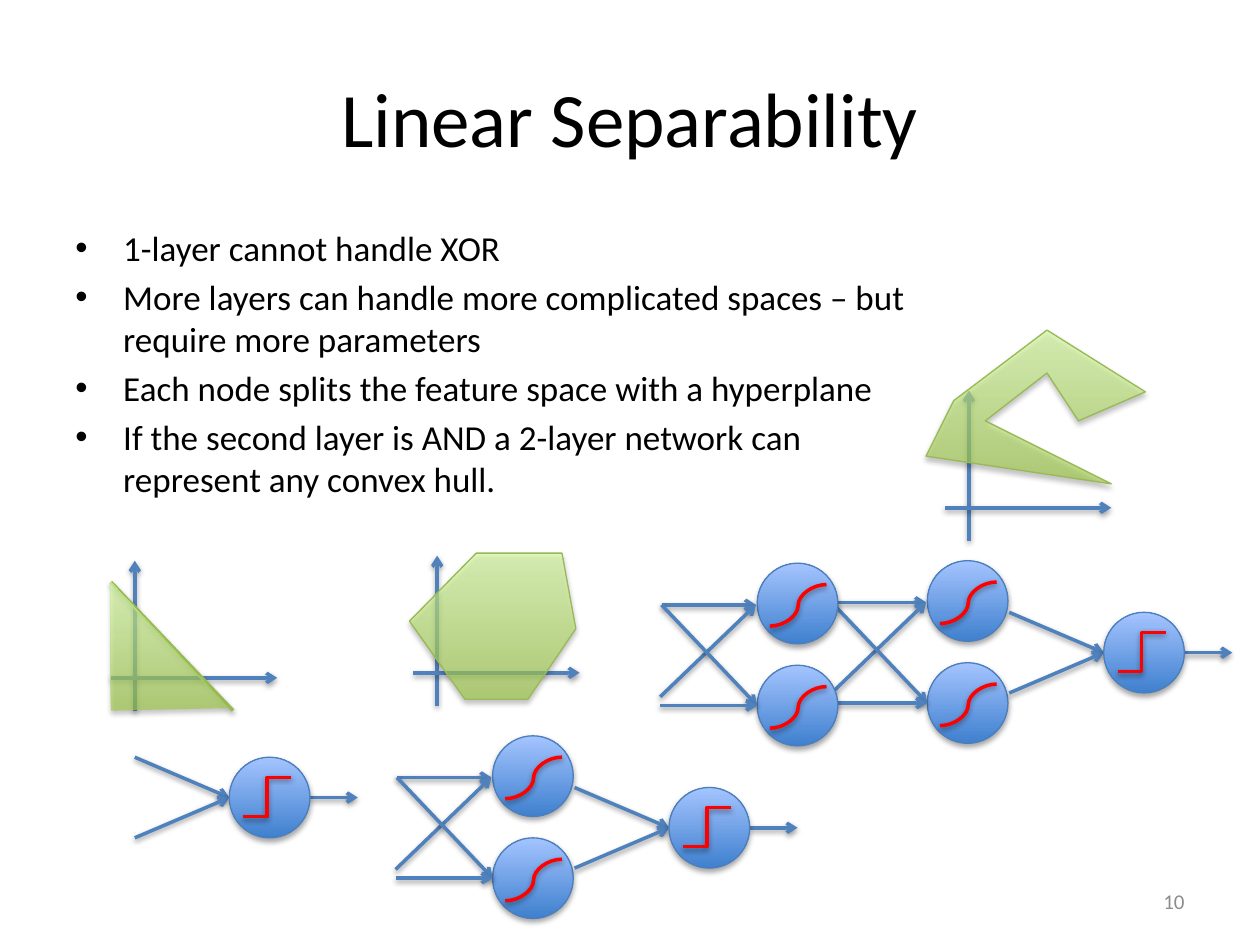
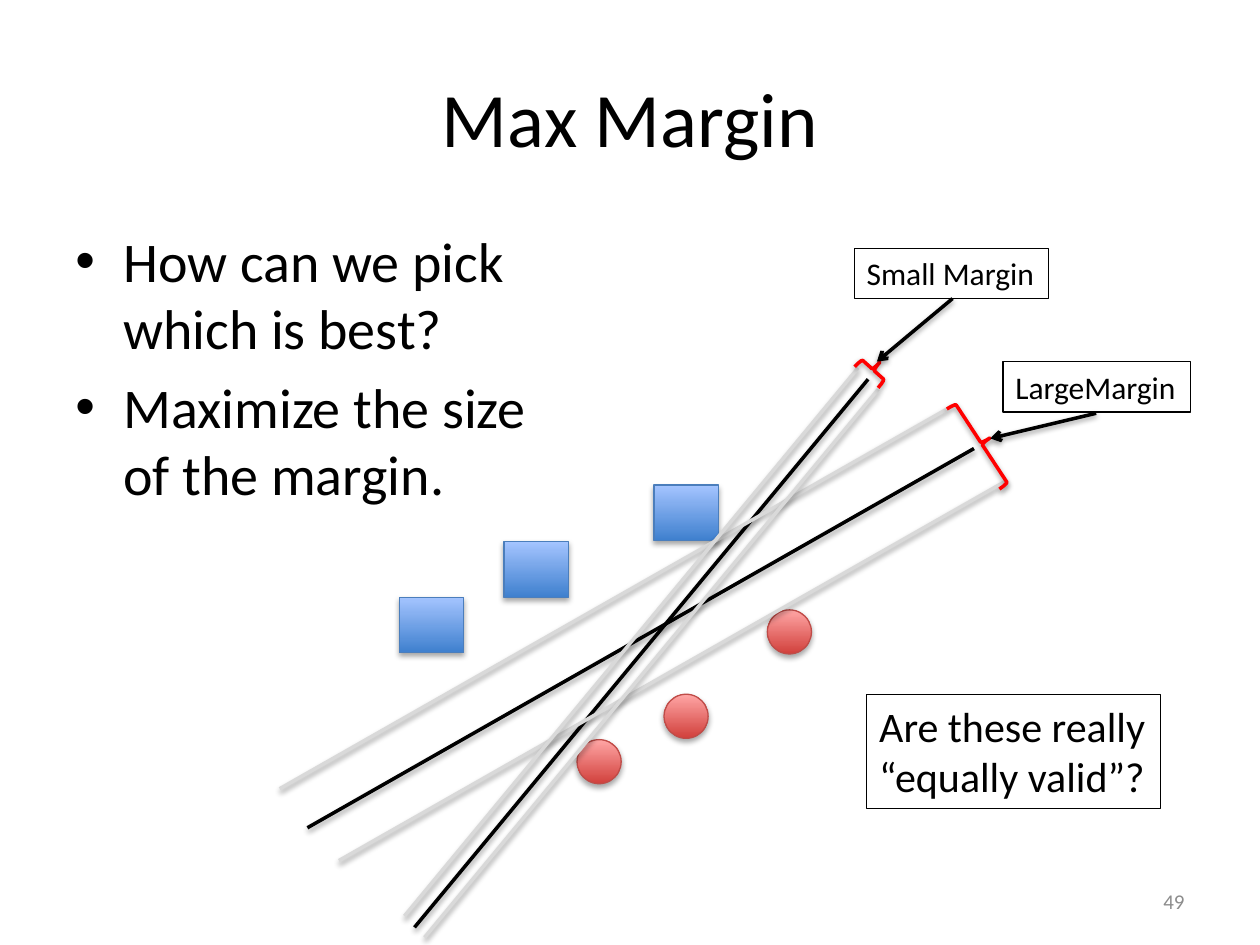
from dataclasses import dataclass

import pptx
import pptx.dml.color
import pptx.enum.shapes
import pptx.enum.text
import pptx.oxml.ns
import pptx.util
from lxml import etree

Inches = pptx.util.Inches
qn = pptx.oxml.ns.qn
SHAPE = pptx.enum.shapes.MSO_SHAPE
CONNECTOR = pptx.enum.shapes.MSO_CONNECTOR
ALIGN = pptx.enum.text.PP_ALIGN
ANCHOR = pptx.enum.text.MSO_ANCHOR


@dataclass(frozen=True)
class Theme:
    font: str = "Calibri"
    title_size: int = 44
    question_size: int = 24
    label_size: int = 18
    number_size: int = 12
    black: str = "000000"
    grey: str = "8C8C8C"
    margin: str = "D9D9D9"
    arrow: str = "4F81BD"
    red: str = "FF0000"
    green: str = "9BBB59"
    # Each gradient is bottom colour, top colour, outline
    blue_body: tuple = ("3F80CE", "A4C4FF", "4B7EBC")
    red_body: tuple = ("D1403C", "FFA6A5", "BF4C48")
    green_body: tuple = ("A0CA4A", "DAFFA5", "98B955")
    thick: float = 2
    thin: float = 0.75


THEME = Theme()
NODE = 0.64        # diameter of a neuron
NODE_STEP = 0.81   # distance between neurons of one layer


def rgb(code):
    return pptx.dml.color.RGBColor.from_string(code)


# Formatting
def set_line(shape, color, width):
    shape.line.color.rgb = rgb(color)
    shape.line.width = pptx.util.Pt(width)


def add_shadow(shape, opacity, distance):
    properties = shape._element.spPr
    effects = properties.find(qn("a:effectLst"))
    if effects is None:
        effects = etree.SubElement(properties, qn("a:effectLst"))
    shadow = etree.SubElement(effects, qn("a:outerShdw"), blurRad="40000",
                              dist=str(distance), dir="5400000", rotWithShape="0")
    color = etree.SubElement(shadow, qn("a:srgbClr"), val=THEME.black)
    etree.SubElement(color, qn("a:alpha"), val=str(opacity * 1000))


def style_body(shape, colors, outlined=True, opacity=100):
    """Vertical gradient, thin outline and soft shadow."""
    bottom, top, outline = colors
    shape.fill.gradient()
    shape.fill.gradient_angle = 90
    for stop, color, position in zip(shape.fill.gradient_stops, (bottom, top), (0, 1)):
        stop.color.rgb = rgb(color)
        stop.position = position
    if opacity < 100:
        for color in shape._element.spPr.iter(qn("a:srgbClr")):
            etree.SubElement(color, qn("a:alpha"), val=str(opacity * 1000))
    if outlined:
        set_line(shape, outline, THEME.thin)
    else:
        shape.line.fill.background()
    shape.shadow.inherit = False
    add_shadow(shape, 35, 23000)


# Elements
def add_text(slide, text, box, size, color=THEME.black, align=ALIGN.LEFT,
             anchor=ANCHOR.TOP, bullets=False, framed=False):
    shape = slide.shapes.add_textbox(*map(Inches, box))
    frame = shape.text_frame
    frame.word_wrap = not framed
    frame.vertical_anchor = anchor
    if framed:
        frame.auto_size = pptx.enum.text.MSO_AUTO_SIZE.SHAPE_TO_FIT_TEXT
        set_line(shape, THEME.black, THEME.thin)
    frame.text = text
    for paragraph in frame.paragraphs:
        paragraph.alignment = align
        font = paragraph.runs[0].font
        font.name, font.size = THEME.font, pptx.util.Pt(size)
        font.color.rgb = rgb(color)
        if bullets:
            paragraph.space_before = pptx.util.Pt(size * 0.2)
            properties = paragraph._p.get_or_add_pPr()
            properties.set("marL", str(Inches(0.38)))
            properties.set("indent", str(Inches(-0.38)))
            etree.SubElement(properties, qn("a:buFont"), typeface="Arial")
            etree.SubElement(properties, qn("a:buChar"), char="•")


def add_line(shapes, start, end, color=THEME.arrow, kind=CONNECTOR.STRAIGHT, arrow=False):
    line = shapes.add_connector(kind, *map(Inches, (*start, *end)))
    set_line(line, color, THEME.thick)
    if arrow:
        etree.SubElement(line.line._get_or_add_ln(), qn("a:tailEnd"), type="arrow")
    add_shadow(line, 38, 20000)


def add_arrows(shapes, x, y, routes):
    """Arrows whose ends are given relative to x, y."""
    for x1, y1, x2, y2 in routes:
        add_line(shapes, (x + x1, y + y1), (x + x2, y + y2), arrow=True)


def add_body(shapes, kind, box, colors):
    style_body(shapes.add_shape(kind, *map(Inches, box)), colors)


def add_region(shapes, points, closed=True):
    first, *rest = [(Inches(x), Inches(y)) for x, y in points]
    builder = shapes.build_freeform(*first)
    builder.add_line_segments(rest, close=closed)
    style_body(builder.convert_to_shape(), THEME.green_body, outlined=closed, opacity=65)


def add_axes(shapes, x, y):
    add_arrows(shapes, x, y, [(0.19, 0.26, 0.19, -0.93), (0, 0, 1.32, 0)])


def add_neuron(slide, x, y, kind, curve):
    shapes = slide.shapes.add_group_shape().shapes
    add_body(shapes, SHAPE.OVAL, (x, y, NODE, NODE), THEME.blue_body)
    x1, y1, x2, y2 = curve
    add_line(shapes, (x + x1, y + y1), (x + x2, y + y2), THEME.red, kind)


def add_hidden_layer(slide, x, y):
    """Two sigmoid neurons with crossed inputs."""
    for row in range(2):
        add_neuron(slide, x, y + row * NODE_STEP, CONNECTOR.CURVE, (0.1, 0.5, 0.55, 0.17))
    add_arrows(slide.shapes, x, y, [
        (-0.76, 0.33, -0.01, 0.33), (-0.77, 1.06, -0.01, 0.33),
        (-0.76, 0.33, 0, 1.13), (-0.77, 1.13, 0, 1.13)])


def add_output_neuron(slide, x, y):
    """Step neuron with two inputs and one output."""
    middle = NODE / 2
    add_arrows(slide.shapes, x, y, [
        (-0.75, 0, 0, middle), (-0.75, NODE, 0, middle), (NODE, middle, 1.02, middle)])
    add_neuron(slide, x, y, CONNECTOR.ELBOW, (0.11, 0.47, 0.49, 0.16))


def add_brace(slide, box, rotation):
    brace = slide.shapes.add_shape(SHAPE.RIGHT_BRACE, *map(Inches, box))
    brace.rotation = rotation
    brace.fill.background()
    set_line(brace, THEME.red, THEME.thick)
    brace.shadow.inherit = False
    add_shadow(brace, 38, 20000)


def add_slide(presentation, title, bullets, body_box, body_size, number):
    slide = presentation.slides.add_slide(presentation.slide_layouts[6])
    add_text(slide, title, (0.5, 0.3, 9, 1.25), THEME.title_size,
             align=ALIGN.CENTER, anchor=ANCHOR.MIDDLE)
    add_text(slide, "\n".join(bullets), body_box, body_size, bullets=True)
    add_text(slide, str(number), (7.17, 6.95, 2.33, 0.4), THEME.number_size,
             color=THEME.grey, align=ALIGN.RIGHT, anchor=ANCHOR.MIDDLE)
    return slide


# Slides
def build_separability(presentation):
    slide = add_slide(presentation, "Linear Separability", [
        "1-layer cannot handle XOR",
        "More layers can handle more complicated spaces – but require more parameters",
        "Each node splits the feature space with a hyperplane",
        "If the second layer is AND a 2-layer network can represent any convex hull.",
    ], (0.5, 1.75, 7.04, 2.15), 20, 10)

    # One layer: half plane
    add_axes(slide.shapes, 0.88, 5.38)
    add_line(slide.shapes, (0.88, 4.62), (1.85, 5.64), THEME.green)
    add_region(slide.shapes, [(0.88, 4.62), (0.88, 5.64), (1.82, 5.62)], closed=False)
    add_output_neuron(slide, 1.82, 6.01)

    # Two layers: convex hull
    hull = slide.shapes.add_group_shape().shapes
    add_axes(hull, 3.28, 5.34)
    add_region(hull, [(3.25, 4.93), (3.69, 5.55), (4.19, 5.55), (4.57, 4.99),
                      (4.46, 4.39), (3.78, 4.39)])
    add_hidden_layer(slide, 3.91, 5.84)
    add_output_neuron(slide, 5.31, 6.25)

    # Three layers: any region
    concave = slide.shapes.add_group_shape().shapes
    add_axes(concave, 7.5, 4.03)
    add_region(concave, [(7.57, 3.18), (8.31, 2.62), (9.09, 3.11), (8.56, 3.34),
                         (8.31, 2.96), (7.82, 3.34), (8.82, 3.84), (7.35, 3.62)])
    add_hidden_layer(slide, 7.36, 4.45)
    add_output_neuron(slide, 8.76, 4.86)
    add_hidden_layer(slide, 6.01, 4.47)


def build_max_margin(presentation):
    slide = add_slide(presentation, "Max Margin", [
        "How can we pick which is best?",
        "Maximize the size of the margin.",
    ], (0.5, 1.75, 3.86, 2.99), 32, 49)
    shapes = slide.shapes

    # The two classes
    for x, y in [(5.19, 3.85), (4, 4.3), (3.17, 4.74)]:
        add_body(shapes, SHAPE.RECTANGLE, (x, y, 0.51, 0.44), THEME.blue_body)
    for x, y in [(6.09, 4.84), (4.58, 5.87), (5.27, 5.51)]:
        add_body(shapes, SHAPE.OVAL, (x, y, 0.35, 0.35), THEME.red_body)

    # Separators, then the margins beside them
    steep = ((6.89, 3.01), (3.29, 7.36))
    flat = ((2.44, 6.57), (7.73, 3.56))
    for start, end in (steep, flat):
        add_line(shapes, start, end, THEME.black)
    for separator, dx, dy in [(flat, 0.25, 0.26), (flat, -0.22, -0.31),
                              (steep, 0.08, 0.08), (steep, -0.08, -0.09)]:
        start, end = [(x + dx, y + dy) for x, y in separator]
        add_line(shapes, start, end, THEME.margin)
    add_brace(slide, (6.85, 2.81, 0.16, 0.25), 312)
    add_brace(slide, (7.71, 3.14, 0.16, 0.76), 326.7)

    # Labels and their arrows
    for text, box, size in [
        ("Are these really\n“equally valid”?", (6.88, 5.51, 2.33, 0.91), THEME.question_size),
        ("Small Margin", (6.78, 1.97, 1.54, 0.4), THEME.label_size),
        ("LargeMargin", (7.96, 2.87, 1.49, 0.4), THEME.label_size),
    ]:
        add_text(slide, text, box, size, framed=True)
    add_line(shapes, (8.7, 3.28), (7.86, 3.48), THEME.black, arrow=True)
    add_line(shapes, (7.56, 2.37), (6.96, 2.87), THEME.black, arrow=True)


def main():
    presentation = pptx.Presentation()
    presentation.slide_width, presentation.slide_height = Inches(10), Inches(7.5)
    build_separability(presentation)
    build_max_margin(presentation)
    presentation.save("out.pptx")


if __name__ == "__main__":
    main()
